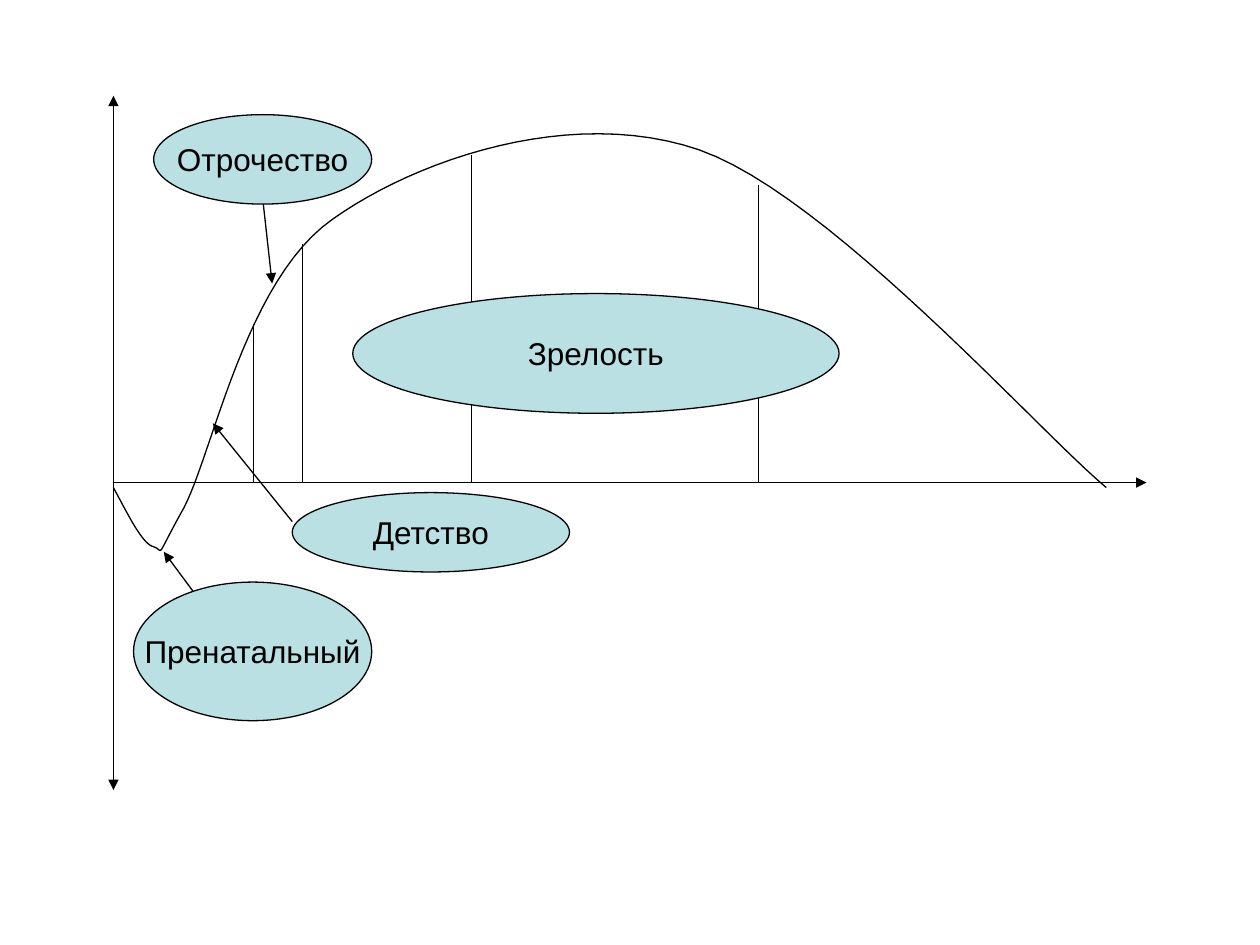
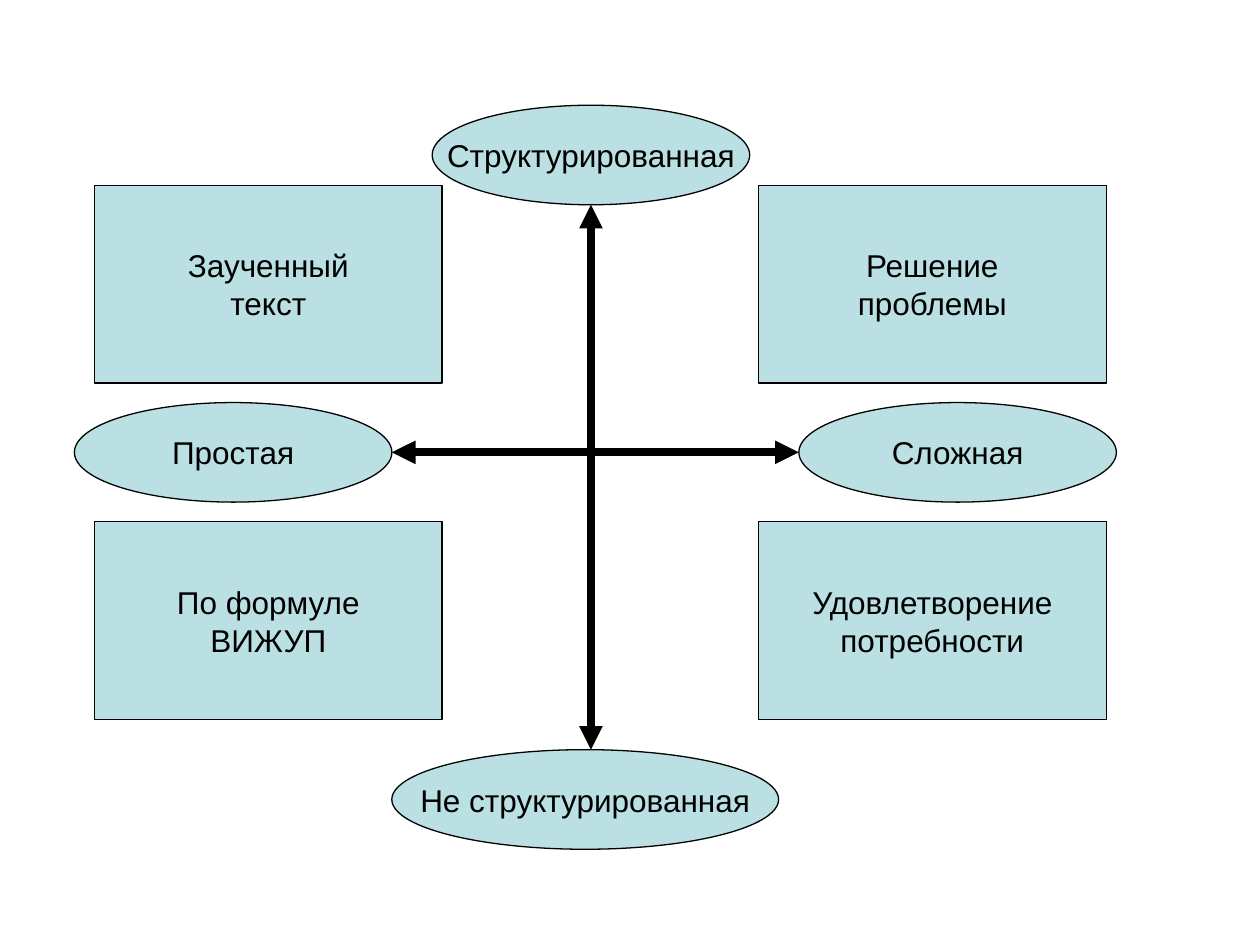
"""Builds two diagram slides: a life-cycle curve and a grid of presentation types."""
from itertools import product

from lxml.etree import SubElement
from pptx import Presentation
from pptx.dml.color import RGBColor
from pptx.enum.shapes import MSO_CONNECTOR as Connector, MSO_SHAPE as Shape
from pptx.enum.text import MSO_ANCHOR as Anchor, PP_ALIGN as Align
from pptx.oxml.ns import qn
from pptx.util import Pt

COLORS = {"fill": "BBE0E3", "ink": "000000"}
FRAME_FORMAT = {"word_wrap": False, "vertical_anchor": Anchor.MIDDLE}
FONT_FORMAT = {"name": "Arial", "size": Pt(18)}
THIN, THICK = 0.75, 4.5


def apply_format(target, values):
    for name, value in values.items():
        setattr(target, name, value)


def bezier_points(start, curves, steps=24):
    points = [start]
    for first, second, end in curves:
        corners = (points[-1], first, second, end)
        for step in range(1, steps + 1):
            t = step / steps
            weights = ((1 - t) ** 3, 3 * t * (1 - t) ** 2, 3 * t * t * (1 - t), t ** 3)
            points.append(tuple(sum(w * corner[axis] for w, corner in zip(weights, corners))
                                for axis in (0, 1)))
    return points


class Diagram:
    def __init__(self, presentation):
        self.presentation = presentation
        self.slide = None

    def color(self, name):
        return RGBColor.from_string(COLORS[name])

    def new_slide(self):
        self.slide = self.presentation.slides.add_slide(self.presentation.slide_layouts[6])

    def outline(self, shape, width=THIN):
        shape.line.fill.solid()
        shape.line.color.rgb = self.color("ink")
        shape.line.width = Pt(width)

    def line(self, x1, y1, x2, y2, width=THIN, arrows=()):
        connector = self.slide.shapes.add_connector(
            Connector.STRAIGHT, Pt(x1), Pt(y1), Pt(x2), Pt(y2))
        self.outline(connector, width)
        properties = connector.line._get_or_add_ln()
        for end in arrows:
            SubElement(properties, qn(f"a:{end}End"), type="triangle")
        SubElement(connector._element.spPr, qn("a:effectLst"))

    def arrow(self, *ends):
        self.line(*ends, arrows=("tail",))

    def double_arrow(self, *ends, width=THIN):
        self.line(*ends, width=width, arrows=("head", "tail"))

    def curve(self, start, curves):
        first, *rest = [(Pt(x), Pt(y)) for x, y in bezier_points(start, curves)]
        builder = self.slide.shapes.build_freeform(*first)
        builder.add_line_segments(rest, close=False)
        shape = builder.convert_to_shape()
        shape.shadow.inherit = False
        shape.fill.background()
        self.outline(shape)

    def label(self, kind, text, left, top, width, height):
        shape = self.slide.shapes.add_shape(kind, Pt(left), Pt(top), Pt(width), Pt(height))
        shape.shadow.inherit = False
        shape.fill.solid()
        shape.fill.fore_color.rgb = self.color("fill")
        self.outline(shape)
        apply_format(shape.text_frame, FRAME_FORMAT)
        shape.text_frame.text = text
        for paragraph in shape.text_frame.paragraphs:
            paragraph.alignment = Align.CENTER
            apply_format(paragraph.font, FONT_FORMAT)
            paragraph.font.color.rgb = self.color("ink")

    def ellipse(self, text, *box):
        self.label(Shape.OVAL, text, *box)

    def box(self, text, *box):
        self.label(Shape.RECTANGLE, text, *box)


def build_life_cycle(diagram):
    diagram.new_slide()
    axis_x, axis_y = 64.8, 275.76
    diagram.double_arrow(axis_x, 54.72, axis_x, 451.44)
    diagram.arrow(axis_x, axis_y, 655.2, axis_y)
    diagram.curve((axis_x, 278.64), [
        ((73.44, 294.48), (81.36, 311.04), (87.84, 312.48)),
        ((94.32, 314.64), (87.84, 321.12), (105.12, 290.16)),
        ((121.68, 258.48), (140.4, 159.84), (190.08, 125.28)),
        ((237.6, 91.44), (326.16, 60.48), (399.6, 85.68)),
        ((473.76, 111.6), (593.28, 246.24), (632.16, 278.64)),
    ])
    for x, top in [(144.72, 185.04), (172.8, 139.68), (269.28, 88.56), (433.44, 105.84)]:
        diagram.line(x, top, x, axis_y)
    diagram.ellipse("Зрелость", 201.6, 167.76, 277.92, 68.4)
    stages = [
        ("Пренатальный", (76.32, 332.64, 136.08, 79.2), (110.16, 337.68, 93.6, 315.36)),
        ("Детство", (167.04, 281.52, 158.4, 45.36), (167.04, 298.08, 121.68, 241.92)),
        ("Отрочество", (87.84, 65.52, 124.56, 51.12), (150.48, 116.64, 155.52, 162)),
    ]
    for text, box, pointer in stages:
        diagram.ellipse(text, *box)
        diagram.arrow(*pointer)


def build_presentation_types(diagram):
    diagram.new_slide()
    left, right, top, bottom = 223.92, 456.48, 117, 428.4
    center_x, center_y = 337.68, 258.48
    width, height = 181.44, 56.88
    diagram.double_arrow(left, center_y, right, center_y, width=THICK)
    diagram.double_arrow(center_x, top, center_x, bottom, width=THICK)
    diagram.ellipse("Простая", left - width, center_y - height / 2, width, height)
    diagram.ellipse("Сложная", right, center_y - height / 2, width, height)
    diagram.ellipse("Структурированная", center_x - width / 2, top - height, width, height)
    diagram.ellipse("Не структурированная", left, bottom, 221.04, height)
    types = ["Заученный\nтекст", "По формуле\nВИЖУП",
             "Решение\nпроблемы", "Удовлетворение\nпотребности"]
    for text, (x, y) in zip(types, product((54, 433.44), (105.84, 298.08))):
        diagram.box(text, x, y, 198.72, 113.04)


def main():
    presentation = Presentation()
    apply_format(presentation, {"slide_width": Pt(720), "slide_height": Pt(540)})
    diagram = Diagram(presentation)
    build_life_cycle(diagram)
    build_presentation_types(diagram)
    presentation.save("out.pptx")


if __name__ == "__main__":
    main()
